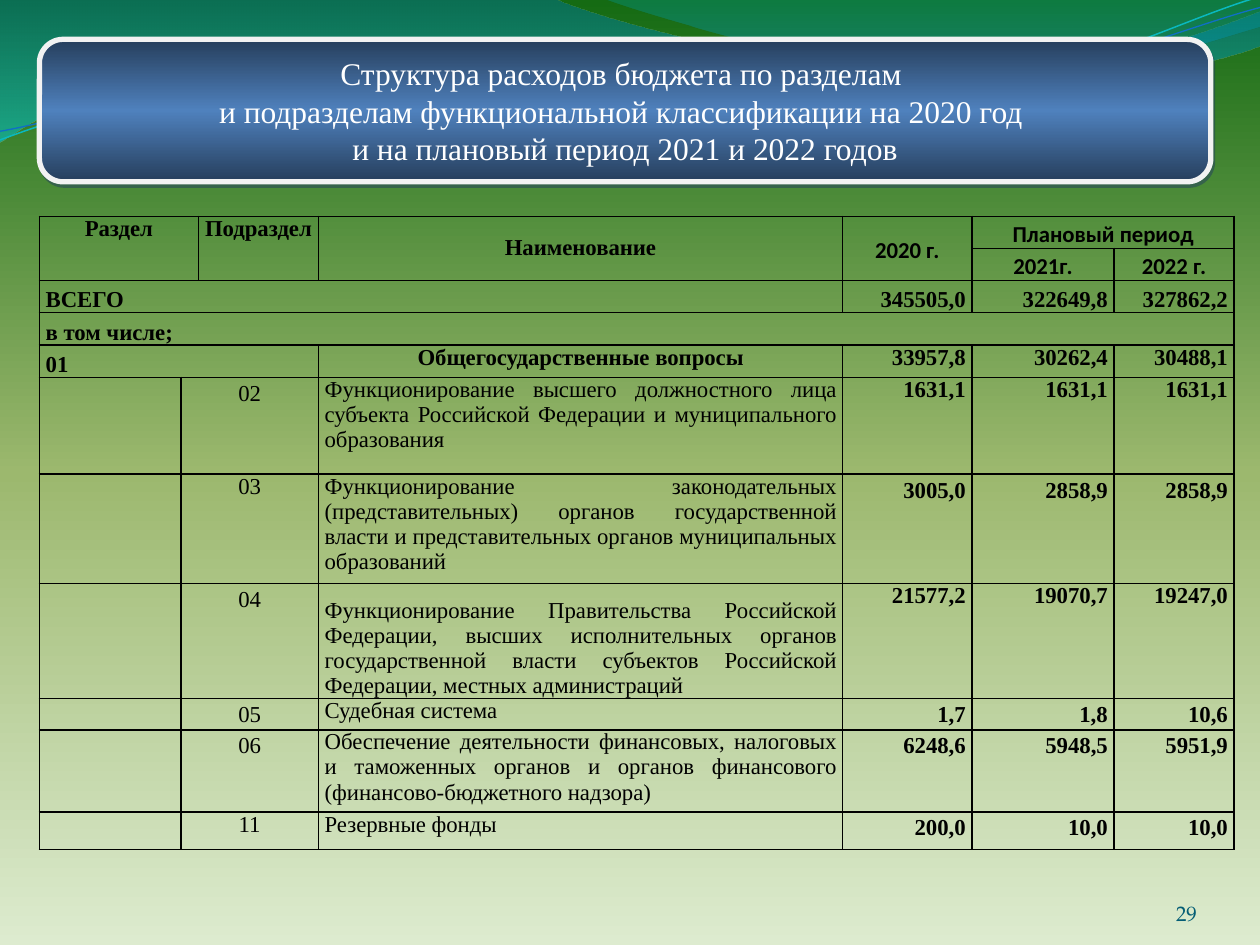
from lxml.etree import SubElement
from pptx import Presentation
from pptx.dml.color import RGBColor
from pptx.enum.shapes import MSO_SHAPE as Shape
from pptx.enum.text import MSO_ANCHOR as Anchor, PP_ALIGN as Align
from pptx.oxml import parse_xml
from pptx.oxml.ns import nsdecls, qn
from pptx.util import Pt

SERIF = "Times New Roman"
BLACK = "000000"

# Paragraph formats
LOOSE = {"line_spacing": 1.15, "space_after": Pt(10)}
LEFT = {"alignment": Align.LEFT}
CENTER = {"alignment": Align.CENTER}
RIGHT = {"alignment": Align.RIGHT}
JUSTIFY = {"alignment": Align.JUSTIFY}
HEADING = {**CENTER, "space_before": Pt(12), "space_after": Pt(3)}

# Font formats
PLAIN = {"name": SERIF, "size": Pt(13), "bold": False}
BOLD = {**PLAIN, "bold": True}
YEAR = {**BOLD, "name": "Calibri"}

COLUMN_WIDTHS = [80.8, 8.2, 68.6, 299.5, 74, 81.2, 68.6]
ROW_HEIGHTS = [18.3, 18.3, 18.5, 18.5, 18.5, 55.4, 55.4, 65.6, 11.5, 40.3, 21.6]

# Code, name, amounts, name format, name anchor, code is loose, amounts are loose
SUBSECTIONS = [
    ("02", "Функционирование высшего должностного лица субъекта Российской "
     "Федерации и муниципального образования",
     ("1631,1", "1631,1", "1631,1"), JUSTIFY, Anchor.TOP, True, False),
    ("03", "Функционирование законодательных (представительных) органов "
     "государственной власти и представительных органов муниципальных образований",
     ("3005,0", "2858,9", "2858,9"), JUSTIFY, Anchor.TOP, False, True),
    ("04", "Функционирование Правительства Российской Федерации, высших "
     "исполнительных органов государственной власти субъектов Российской "
     "Федерации, местных администраций",
     ("21577,2", "19070,7", "19247,0"), JUSTIFY, Anchor.BOTTOM, True, False),
    ("05", "Судебная система",
     ("1,7", "1,8", "10,6"), LEFT, Anchor.TOP, True, True),
    ("06", "Обеспечение деятельности финансовых, налоговых и таможенных органов "
     "и органов финансового (финансово-бюджетного надзора)",
     ("6248,6", "5948,5", "5951,9"), JUSTIFY, Anchor.TOP, True, True),
    ("11", "Резервные фонды",
     ("200,0", "10,0", "10,0"), JUSTIFY, Anchor.TOP, False, True),
]

# Waves in points: start, then cubic segments; a pair alone is a straight line
TEAL_WAVE = [(0, -0.7), (316.8, -0.7), (342.7, 12.2, 478.1, 45.4, 545.8, 45.4),
             (614.2, 45.4, 689.8, 18.7, 720, 6.5), (720.7, 25.9),
             (707.8, 31.7, 626.4, 54.7, 537.1, 54),
             (447.8, 54, 275, 20.2, 185, 24.5), (92.9, 25.2, 33.1, 59.8, -0.7, 81.4)]
BLUE_WAVE = [(344.9, -0.7), (366.5, 7.9, 491, 44.6, 553.7, 46.8),
             (616.3, 49.7, 691.9, 23, 720, 15.1), (720, 0)]
CYAN_LINE = [(-1.4, 63), (33.8, 51.7, 114.1, 29.4, 199.8, 29.9),
             (284.9, 30.3, 425.8, 67.3, 512.4, 64.9), (599, 62.4, 676.4, 25.7, 720.2, 15.5)]
NAVY_LINE = [(-1.1, 58), (32.9, 53.8, 118.3, 32.5, 204.1, 33),
             (290.6, 33.4, 428.9, 63.1, 515.5, 61.4), (601.4, 59.6, 678.4, 30.1, 721.4, 21.3)]


def color(value):
    return RGBColor.from_string(value)


def apply_format(target, values):
    for name, value in values.items():
        setattr(target, name, value)


def set_gradient(fill, element, stops, angle):
    """Stops are (position %, colour, opacity %)."""
    fill.gradient()
    gradient = element.find(".//" + qn("a:gradFill"))
    for child in list(gradient):
        gradient.remove(child)
    stop_list = SubElement(gradient, qn("a:gsLst"))
    for position, value, opacity in stops:
        stop = SubElement(stop_list, qn("a:gs"), pos=str(position * 1000))
        rgb = SubElement(stop, qn("a:srgbClr"), val=value)
        if opacity < 100:
            SubElement(rgb, qn("a:alpha"), val=str(opacity * 1000))
    SubElement(gradient, qn("a:lin"), ang=str(angle * 60000), scaled="0")


def write_paragraph(paragraph, text, layout, font, value):
    apply_format(paragraph, layout)
    run = paragraph.add_run()
    run.text = text
    apply_format(run.font, font)
    run.font.color.rgb = color(value)


def add_wave(slide, wave, close):
    ends = [(Pt(segment[-2]), Pt(segment[-1])) for segment in wave]
    builder = slide.shapes.build_freeform(*ends[0])
    builder.add_line_segments(ends[1:], close=close)
    shape = builder.convert_to_shape()
    shape.shadow.inherit = False
    # Bend the segments that have control points
    for line, segment in zip(list(shape.element.iter(qn("a:lnTo"))), wave[1:]):
        if len(segment) == 6:
            curve = SubElement(line.getparent(), qn("a:cubicBezTo"))
            line.getparent().replace(line, curve)
            for x, y in zip(segment[::2], segment[1::2]):
                SubElement(curve, qn("a:pt"), x=str(Pt(x) - shape.left), y=str(Pt(y) - shape.top))
    return shape


def add_wave_area(slide, wave, stops):
    shape = add_wave(slide, wave, True)
    set_gradient(shape.fill, shape.element, stops, 90)
    shape.line.fill.background()


def add_wave_line(slide, wave, value, width):
    shape = add_wave(slide, wave, False)
    shape.rotation = 357.3
    shape.fill.background()
    shape.line.color.rgb = color(value)
    shape.line.width = Pt(width)


def add_title(slide, lines):
    shape = slide.shapes.add_shape(Shape.FLOWCHART_ALTERNATE_PROCESS,
                                   Pt(22.5), Pt(22.5), Pt(669.4), Pt(81.4))
    shape.shadow.inherit = False
    set_gradient(shape.fill, shape.element,
                 [(0, "263E5C", 100), (50, "4F81BD", 100), (100, "263E5C", 100)], 90)
    shape.line.color.rgb = color("F2F2F2")
    shape.line.width = Pt(3)
    effects = shape.element.spPr.find(qn("a:effectLst"))
    shadow = SubElement(effects, qn("a:outerShdw"), blurRad="0", dist=str(Pt(2.2)),
                        dir=str(63 * 60000), algn="ctr", rotWithShape="0")
    SubElement(SubElement(shadow, qn("a:srgbClr"), val="243F60"), qn("a:alpha"), val="50000")
    frame = shape.text_frame
    for index, line in enumerate(lines):
        paragraph = frame.add_paragraph() if index else frame.paragraphs[0]
        write_paragraph(paragraph, line, CENTER, {"name": SERIF, "size": Pt(18)}, "FFFFFF")


def add_page_number(slide, text):
    frame = slide.shapes.add_textbox(Pt(624.2), Pt(500.4), Pt(59.8), Pt(28.8)).text_frame
    apply_format(frame, {"margin_left": 0, "margin_right": 0, "margin_top": 0,
                         "margin_bottom": 0, "word_wrap": True,
                         "vertical_anchor": Anchor.BOTTOM})
    write_paragraph(frame.paragraphs[0], text, RIGHT,
                    {"name": "TeX Gyre Pagella", "size": Pt(12)}, "045D75")


def style_cell(cell):
    apply_format(cell, {"margin_left": Pt(3.6), "margin_right": Pt(3.6),
                        "margin_top": 0, "margin_bottom": 0})
    cell.fill.background()
    properties = cell._tc.get_or_add_tcPr()
    for index, side in enumerate("LRTB"):
        properties.insert(index, parse_xml(
            f'<a:ln{side} {nsdecls("a")} w="{Pt(1)}"><a:solidFill>'
            f'<a:srgbClr val="{BLACK}"/></a:solidFill></a:ln{side}>'))
    if not cell.text_frame.text:
        SubElement(cell.text_frame.paragraphs[0]._p, qn("a:endParaRPr"), sz="1300")


def fill_cell(table, row, column, text, layout, font=BOLD, anchor=Anchor.TOP, span=(1, 1)):
    cell = table.cell(row, column)
    if span != (1, 1):
        cell.merge(table.cell(row + span[0] - 1, column + span[1] - 1))
    cell.vertical_anchor = anchor
    write_paragraph(cell.text_frame.paragraphs[0], text, layout, font, BLACK)


def fill_amounts(table, row, amounts, layout=RIGHT, anchor=Anchor.TOP):
    for column, amount in enumerate(amounts, 4):
        fill_cell(table, row, column, amount, layout, anchor=anchor)


def add_budget_table(slide):
    frame = slide.shapes.add_table(len(ROW_HEIGHTS), len(COLUMN_WIDTHS), Pt(22.5),
                                   Pt(123.6), Pt(sum(COLUMN_WIDTHS)), Pt(361.4))
    table = frame.table
    apply_format(table, {"first_row": False, "horz_banding": False})
    for column, width in zip(table.columns, COLUMN_WIDTHS):
        column.width = Pt(width)
    for row, height in zip(table.rows, ROW_HEIGHTS):
        row.height = Pt(height)
    frame.height = Pt(361.4)

    # Header
    year = {**CENTER, **LOOSE}
    fill_cell(table, 0, 0, "Раздел", HEADING, span=(2, 2))
    fill_cell(table, 0, 2, "Подраздел", HEADING, span=(2, 1))
    fill_cell(table, 0, 3, "Наименование", HEADING, anchor=Anchor.MIDDLE, span=(2, 1))
    fill_cell(table, 0, 4, "2020 г.", year, YEAR, Anchor.MIDDLE, (2, 1))
    fill_cell(table, 0, 5, "Плановый период", year, YEAR, span=(1, 2))
    fill_cell(table, 1, 5, "2021г.", year, YEAR)
    fill_cell(table, 1, 6, "2022 г.", year, YEAR)

    # Totals and section
    for row, text, width in [(2, "ВСЕГО", 4), (3, "в том числе;", 7), (4, "01", 3)]:
        fill_cell(table, row, 0, text, LEFT, anchor=Anchor.BOTTOM, span=(1, width))
    fill_amounts(table, 2, ("345505,0", "322649,8", "327862,2"), anchor=Anchor.BOTTOM)
    fill_cell(table, 4, 3, "Общегосударственные вопросы", CENTER)
    fill_amounts(table, 4, ("33957,8", "30262,4", "30488,1"))

    # Subsections
    for row, (code, name, amounts, layout, anchor, loose_code, loose_amounts) in enumerate(
            SUBSECTIONS, 5):
        fill_cell(table, row, 1, code, {**CENTER, **(LOOSE if loose_code else {})},
                  PLAIN, span=(1, 2))
        fill_cell(table, row, 3, name, layout, PLAIN, anchor)
        fill_amounts(table, row, amounts, {**RIGHT, **(LOOSE if loose_amounts else {})})

    for cell in table.iter_cells():
        style_cell(cell)


def main():
    presentation = Presentation()
    apply_format(presentation, {"slide_width": Pt(720), "slide_height": Pt(540)})
    slide = presentation.slides.add_slide(presentation.slide_layouts[6])

    # Background and waves
    set_gradient(slide.background.fill, slide.element,
                 [(0, "DDEBCF", 100), (50, "9CB86E", 100), (100, "156B13", 100)], 270)
    add_wave_area(slide, TEAL_WAVE, [(0, "0074A1", 45), (100, "00C6CF", 55)])
    add_wave_area(slide, BLUE_WAVE, [(0, "00A1A9", 30), (80, "008BBF", 45)])
    add_wave_line(slide, CYAN_LINE, "0AB8BF", 0.85)
    add_wave_line(slide, NAVY_LINE, "0F6FC6", 0.75)

    # Content
    add_page_number(slide, "29")
    add_title(slide, ["Структура расходов бюджета по разделам ",
                      "и подразделам функциональной классификации на 2020 год ",
                      "и на плановый период 2021 и 2022 годов"])
    add_budget_table(slide)
    presentation.save("out.pptx")


if __name__ == "__main__":
    main()
